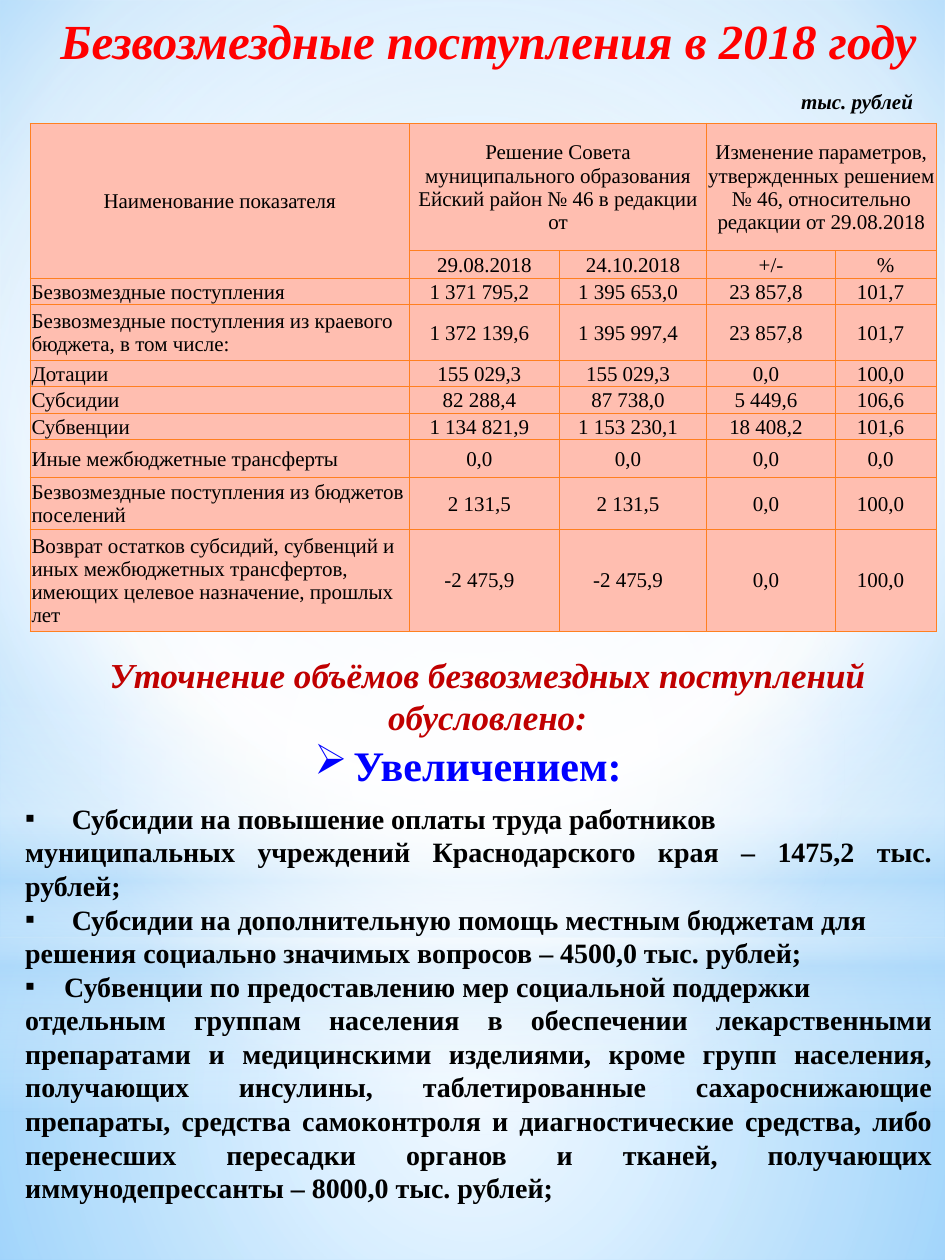
"""Builds the slide on gratuitous budget receipts in 2018."""
from lxml import etree
from pptx import Presentation, util as u
from pptx.dml.color import RGBColor
from pptx.enum import shapes, text
from pptx.oxml import parse_xml
from pptx.oxml.ns import qn

FONT = "Times New Roman"
NS = "http://schemas.openxmlformats.org/drawingml/2006/main"
COLORS = {"title": "FF0000", "text": "000000", "reason": "C00000", "increase": "0000FF",
          "cell": "FFBEB0", "border": "FF8021", "white": "FFFFFF", "sky": "B4DCFA",
          "bg_inner": "9ED5FF", "bg_outer": "5BB9FF"}
ALIGN = {"l": text.PP_ALIGN.LEFT, "c": text.PP_ALIGN.CENTER, "j": text.PP_ALIGN.JUSTIFY}
ANCHOR = {"top": text.MSO_ANCHOR.TOP, "middle": text.MSO_ANCHOR.MIDDLE}

BACKGROUND = [(0, "bg_inner", 100), (60, "white", 100), (100, "bg_outer", 100)]
CENTER = (50, 50, 50, 50)
GLOWS = [
    ("RECTANGLE", (0, 7.44, 7.5, 2.56), CENTER,
     [(0, "white", 91), (37, "white", 76), (100, "sky", 79)]),
    ("RECTANGLE", (0, 0, 7.5, 7.44), CENTER,
     [(0, "white", 89), (48, "white", 62), (100, "sky", 79)]),
    ("RECTANGLE", (0, 5.49, 7.5, 3.33), None,
     [(0, "white", 0), (29, "white", 30), (45, "sky", 40),
      (55, "white", 26), (65, "sky", 60), (100, "white", 0)]),
    ("OVAL", (0, 2.33, 7.5, 7.44), CENTER, [(0, "white", 100), (56, "white", 0)]),
]

TITLE = "Безвозмездные поступления в 2018 году"
UNITS = "тыс. рублей"
REASON = "Уточнение объёмов безвозмездных поступлений обусловлено:"
INCREASE = ("Увеличением:", "➢", 0.31)
CHANGES = [
    ("Субсидии на повышение оплаты труда работников", "▪", 0.37),
    "муниципальных учреждений Краснодарского края – 1475,2 тыс. рублей;",
    ("Субсидии на дополнительную помощь местным бюджетам для", "▪", 0.37),
    "решения социально значимых вопросов – 4500,0 тыс. рублей;",
    ("Субвенции по предоставлению мер социальной поддержки", "▪", 0.31),
    "отдельным группам населения в обеспечении лекарственными препаратами и медицинскими "
    "изделиями, кроме групп населения, получающих инсулины, таблетированные "
    "сахароснижающие препараты, средства самоконтроля и диагностические средства, либо "
    "перенесших пересадки органов и тканей, получающих иммунодепрессанты – 8000,0 тыс. рублей;",
]
HEADER_ROWS = 2
RECEIPTS = [
    ("Наименование показателя",
     "Решение Совета муниципального образования Ейский район № 46 в редакции от", "",
     "Изменение параметров, утвержденных решением № 46, относительно редакции от 29.08.2018", ""),
    ("", "29.08.2018", "24.10.2018", "+/-", "%"),
    ("Безвозмездные поступления", "1 371 795,2", "1 395 653,0", "23 857,8", "101,7"),
    ("Безвозмездные поступления из краевого бюджета, в том числе:",
     "1 372 139,6", "1 395 997,4", "23 857,8", "101,7"),
    ("Дотации", "155 029,3", "155 029,3", "0,0", "100,0"),
    ("Субсидии", "82 288,4", "87 738,0", "5 449,6", "106,6"),
    ("Субвенции", "1 134 821,9", "1 153 230,1", "18 408,2", "101,6"),
    ("Иные межбюджетные трансферты", "0,0", "0,0", "0,0", "0,0"),
    ("Безвозмездные поступления из бюджетов поселений", "2 131,5", "2 131,5", "0,0", "100,0"),
    ("Возврат остатков субсидий, субвенций и иных межбюджетных трансфертов, "
     "имеющих целевое назначение, прошлых лет", "-2 475,9", "-2 475,9", "0,0", "100,0"),
]
MERGES = [((0, 0), (1, 0)), ((0, 1), (0, 2)), ((0, 3), (0, 4))]
COLUMN_WIDTHS = [3.01, 1.19, 1.17, 1.02, 0.8]
ROW_HEIGHTS = [1.01, 0.22, 0.21, 0.44, 0.21, 0.21, 0.21, 0.3, 0.4, 0.81]


def gradient(stops, focus):
    """Return a gradient fill, radial around focus or vertical without it."""
    marks = "".join(
        f'<a:gs pos="{pos * 1000}"><a:srgbClr val="{COLORS[color]}">'
        f'<a:alpha val="{alpha * 1000}"/></a:srgbClr></a:gs>' for pos, color, alpha in stops)
    direction = '<a:lin ang="5400000" scaled="0"/>'
    if focus:
        sides = " ".join(f'{side}="{part * 1000}"' for side, part in zip("ltrb", focus))
        direction = f'<a:path path="circle"><a:fillToRect {sides}/></a:path>'
    return parse_xml(f'<a:gradFill xmlns:a="{NS}" rotWithShape="1">'
                     f'<a:gsLst>{marks}</a:gsLst>{direction}</a:gradFill>')


def swap_fill(holder, new_fill):
    """Replace the solid fill in holder by new_fill."""
    holder.replace(holder.find(qn("a:solidFill")), new_fill)


def place(shape, box):
    """Move and size a shape, in inches."""
    shape.left, shape.top, shape.width, shape.height = map(u.Inches, box)
    return shape


def write(frame, content, size=12, color="text", bold=True, italic=False, align="l",
          anchor="top", wrap=True):
    """Fill a text frame with paragraphs given as text or (text, bullet, indent)."""
    frame.word_wrap = wrap
    frame.vertical_anchor = ANCHOR[anchor]
    for number, item in enumerate(content):
        words, bullet, indent = (item, None, 0) if isinstance(item, str) else item
        paragraph = frame.add_paragraph() if number else frame.paragraphs[0]
        paragraph.alignment = ALIGN[align]
        paragraph.space_before = u.Pt(0)
        props = paragraph._p.get_or_add_pPr()
        props.set("marL", str(u.Inches(indent)))
        props.set("indent", str(-u.Inches(indent)))
        if bullet:
            etree.SubElement(props, qn("a:buChar")).set("char", bullet)
        else:
            etree.SubElement(props, qn("a:buNone"))
        run = paragraph.add_run()
        run.text = words
        font = run.font
        font.name, font.size, font.bold, font.italic = FONT, u.Pt(size), bold, italic
        font.color.rgb = RGBColor.from_string(COLORS[color])


def add_borders(cell):
    """Draw the four borders of a table cell."""
    props = cell._tc.get_or_add_tcPr()
    for index, side in enumerate(("lnL", "lnR", "lnT", "lnB")):
        props.insert(index, parse_xml(
            f'<a:{side} xmlns:a="{NS}" w="9525"><a:solidFill>'
            f'<a:srgbClr val="{COLORS["border"]}"/></a:solidFill></a:{side}>'))


def add_receipts(slide):
    """Add the table of receipts."""
    table = slide.shapes.add_table(
        len(RECEIPTS), len(COLUMN_WIDTHS), u.Inches(0.24), u.Inches(0.98),
        u.Inches(sum(COLUMN_WIDTHS)), u.Inches(sum(ROW_HEIGHTS))).table
    table.first_row = table.horz_banding = False
    for column, width in zip(table.columns, COLUMN_WIDTHS):
        column.width = u.Inches(width)
    for row, height in zip(table.rows, ROW_HEIGHTS):
        row.height = u.Inches(height)
    for first, last in MERGES:
        table.cell(*first).merge(table.cell(*last))
    for r, row in enumerate(RECEIPTS):
        for c, words in enumerate(row):
            cell = table.cell(r, c)
            is_value = r >= HEADER_ROWS and c > 0
            cell.margin_left = cell.margin_top = u.Inches(0.01)
            cell.margin_right = u.Inches(0.09 if is_value else 0.01)
            cell.margin_bottom = 0
            cell.vertical_anchor = ANCHOR["middle"]
            cell.fill.solid()
            cell.fill.fore_color.rgb = RGBColor.from_string(COLORS["cell"])
            add_borders(cell)
            if words:
                write(cell.text_frame, [words], bold=False, anchor="middle",
                      align="c" if c or r < HEADER_ROWS else "l")


def main():
    """Build and save the slide."""
    deck = Presentation()
    deck.slide_width, deck.slide_height = u.Inches(7.5), u.Inches(10)
    slide = deck.slides.add_slide(deck.slide_layouts[1])
    title, changes = slide.placeholders

    slide.background.fill.solid()
    swap_fill(slide._element.cSld.bg.bgPr, gradient(BACKGROUND, (20, 10, 20, 60)))
    for kind, box, focus, stops in GLOWS:
        glow = slide.shapes.add_shape(shapes.MSO_SHAPE[kind], *map(u.Inches, box))
        glow.shadow.inherit = False
        glow.line.fill.background()
        glow.fill.solid()
        swap_fill(glow._element.spPr, gradient(stops, focus))
    for placeholder in (title, changes):
        slide.shapes._spTree.append(placeholder._element)

    write(place(title, (0.38, 0.03, 7.06, 0.57)).text_frame, [TITLE],
          size=28, color="title", italic=True, wrap=False)
    write(place(changes, (0.1, 6.31, 7.4, 3.33)).text_frame, CHANGES, size=16, align="j")
    labels = [
        ((6.26, 0.65, 1.1, 0.3), UNITS, dict(italic=True, wrap=False)),
        ((0.24, 5.14, 7.26, 0.77), REASON,
         dict(size=20, color="reason", italic=True, align="c")),
        ((1.61, 5.82, 4.21, 0.5), INCREASE, dict(size=24, color="increase", align="c")),
    ]
    for box, content, style in labels:
        write(slide.shapes.add_textbox(*map(u.Inches, box)).text_frame, [content], **style)
    add_receipts(slide)
    deck.save("out.pptx")


if __name__ == "__main__":
    main()
